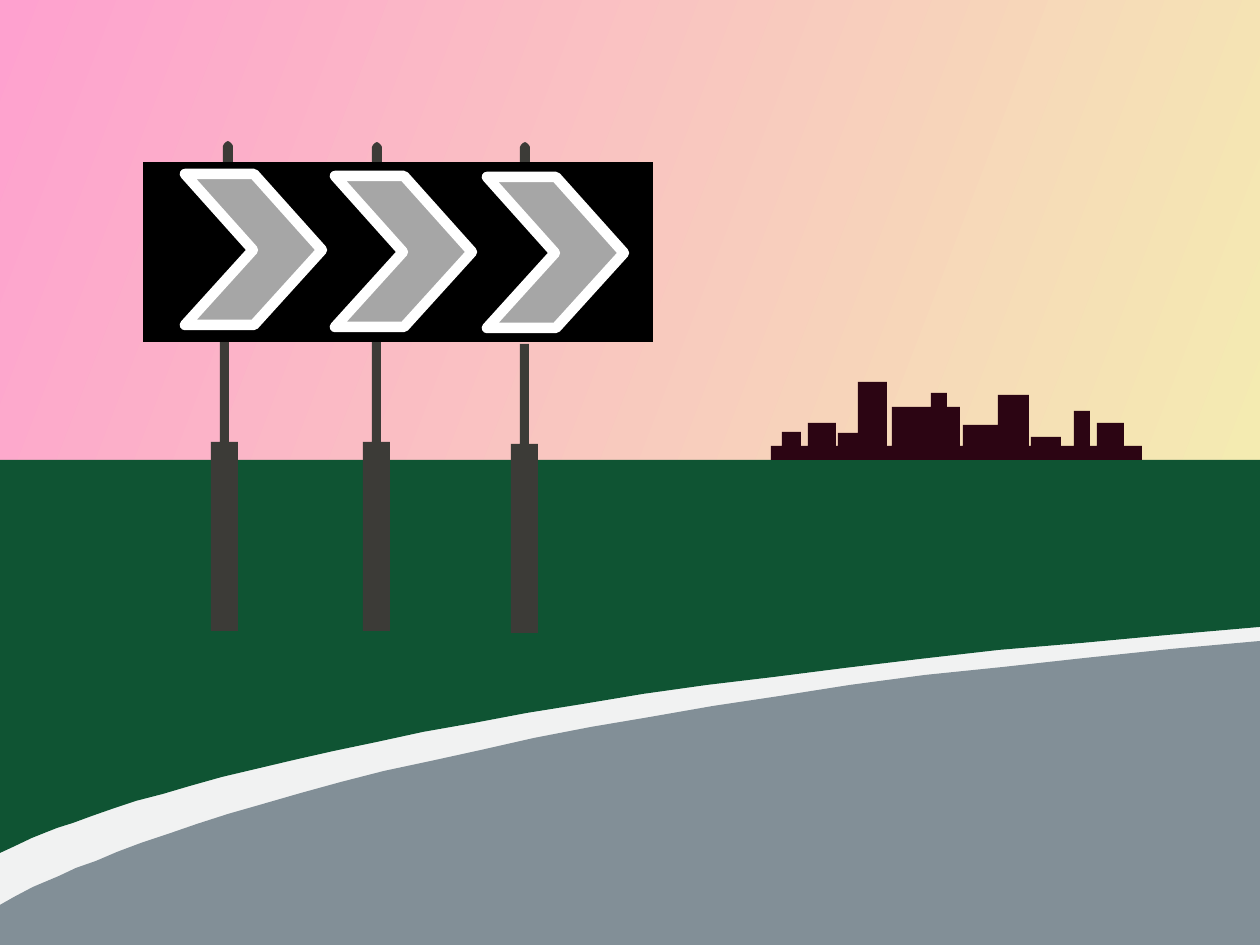
from pptx import Presentation
from pptx.dml.color import RGBColor
from pptx.enum.shapes import MSO_SHAPE
from pptx.util import Pt
from lxml import etree

PX = 914400 / 126
RECT = MSO_SHAPE.RECTANGLE
A_ROUND = "{http://schemas.openxmlformats.org/drawingml/2006/main}round"
W, H, HORIZON = 1260, 945, 460

COLORS = {
    "sky_start": "FEA1CF", "sky_end": "F4EBB1", "grass": "0F5433",
    "verge": "F1F2F2", "road": "828F97", "city": "2C0513",
    "post": "3C3B37", "board": "000000", "arrow": "A6A6A6", "outline": "FFFFFF",
}
SKY_ANGLE = 339

VERGE_EDGE = [
    (0, 853), (13, 847), (32, 838), (57, 828), (73, 823), (92, 816), (112, 809),
    (136, 801), (163, 794), (190, 786), (222, 777), (256, 769), (294, 760),
    (334, 751), (377, 742), (423, 732), (474, 723), (527, 713), (583, 704),
    (643, 694), (707, 685), (774, 677), (845, 668), (920, 659), (999, 650),
    (1082, 643), (1168, 635), (1260, 627),
]
ROAD_EDGE = [
    (0, 905), (14, 897), (33, 887), (59, 876), (76, 868), (96, 861), (117, 852),
    (141, 843), (168, 834), (197, 824), (228, 814), (263, 804), (301, 793),
    (341, 782), (384, 771), (431, 761), (481, 750), (534, 738), (591, 727),
    (650, 717), (713, 706), (780, 696), (850, 685), (925, 675), (1003, 667),
    (1085, 658), (1171, 649), (1260, 641),
]
CITY = {"left": 771, "right": 1142, "roof": 446}
TOWERS = [
    (782, 801, 432), (808, 836, 423), (838, 858, 433), (858, 887, 382),
    (892, 931, 407), (931, 947, 393), (947, 960, 407), (963, 998, 425),
    (998, 1029, 395), (1031, 1061, 437), (1074, 1090, 411), (1097, 1124, 423),
]
POSTS = [(211, 342), (363, 342), (511, 344)]
POST = [(9, 0), (9, 100), (0, 100), (0, 289), (27, 289), (27, 100), (18, 100), (18, 0)]
CAPS = [(223, 141), (372, 142), (520, 142)]
CAP = [(0, 21), (0, 5), (1, 3), (3, 1), (5, 0), (7, 1), (9, 3), (10, 5), (10, 21)]
BOARD = (143, 162, 510, 180)
ARROWS = [(185, 174), (335, 176), (487, 177)]
ARROW = [(0, 0), (69, 0), (137, 76), (69, 151), (0, 151), (68, 76)]


def px(n):
    return round(n * PX)


def paint(sp, color):
    sp.shadow.inherit = False
    sp.fill.solid()
    sp.fill.fore_color.rgb = RGBColor.from_string(COLORS[color])
    sp.line.fill.background()
    return sp


def rect(shapes, box, color):
    return paint(shapes.add_shape(RECT, *map(px, box)), color)


def outline(shapes, points, color, at=(0, 0)):
    points = [(x + at[0], y + at[1]) for x, y in points]
    fb = shapes.build_freeform(*points[0], scale=PX)
    fb.add_line_segments(points[1:], close=True)
    return paint(fb.convert_to_shape(), color)


def skyline():
    points = [(CITY["left"], HORIZON), (CITY["left"], CITY["roof"])]
    for left, right, top in TOWERS:
        points += [(left, CITY["roof"]), (left, top), (right, top), (right, CITY["roof"])]
    return points + [(CITY["right"], CITY["roof"]), (CITY["right"], HORIZON)]


def main():
    prs = Presentation()
    prs.slide_width, prs.slide_height = px(W), px(H)
    shapes = prs.slides.add_slide(prs.slide_layouts[6]).shapes

    sky = rect(shapes, (0, 0, W, HORIZON), "sky_start")
    sky.fill.gradient()
    sky.fill.gradient_angle = SKY_ANGLE
    for stop, name, pos in zip(sky.fill.gradient_stops, ("sky_start", "sky_end"), (0, 1)):
        stop.color.rgb = RGBColor.from_string(COLORS[name])
        stop.position = pos

    ground = [(W, H), (0, H)]
    outline(shapes, VERGE_EDGE + ground, "verge")
    outline(shapes, VERGE_EDGE + [(W, HORIZON), (0, HORIZON)], "grass")
    outline(shapes, ROAD_EDGE + ground, "road")
    outline(shapes, skyline(), "city")

    for post_at, cap_at in zip(POSTS, CAPS):
        outline(shapes, POST, "post", post_at)
        outline(shapes, CAP, "post", cap_at)

    rect(shapes, BOARD, "board")
    for at in ARROWS:
        sp = outline(shapes, ARROW, "arrow", at)
        sp.line.color.rgb = RGBColor.from_string(COLORS["outline"])
        sp.line.width = Pt(6)
        etree.SubElement(sp.line._get_or_add_ln(), A_ROUND)

    prs.save("out.pptx")


if __name__ == "__main__":
    main()
